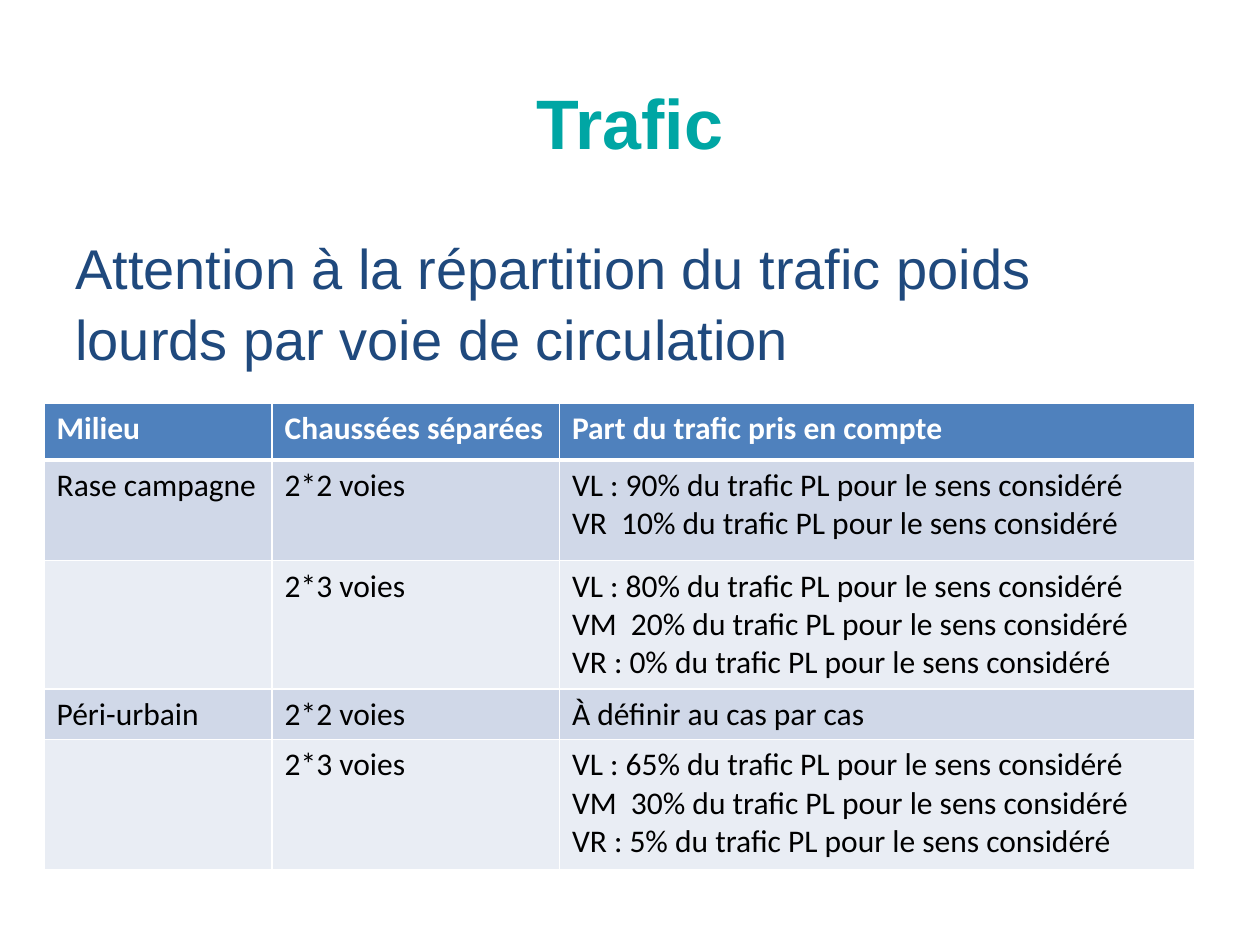
from lxml import etree
from pptx import Presentation
from pptx.dml.color import RGBColor
from pptx.enum.text import MSO_ANCHOR, PP_ALIGN
from pptx.oxml.ns import qn
from pptx.util import Inches, Pt

TEAL = RGBColor(0x00, 0xA6, 0xA4)
NAVY = RGBColor(0x1F, 0x49, 0x7D)
HEADER_BLUE = RGBColor(0x4F, 0x81, 0xBD)
BAND_DARK = RGBColor(0xD0, 0xD8, 0xE8)
BAND_LIGHT = RGBColor(0xE9, 0xED, 0xF4)
WHITE = RGBColor(0xFF, 0xFF, 0xFF)
BLACK = RGBColor(0x00, 0x00, 0x00)

COLUMN_WIDTHS = [1.81, 2.28, 5.04]
ROW_HEIGHTS = [0.45, 0.8, 1.02, 0.4, 1.03]
ROWS = [
    ["Milieu", "Chaussées séparées", "Part du trafic pris en compte"],
    ["Rase campagne", "2*2 voies",
     "VL : 90% du trafic PL pour le sens considéré\n"
     "VR  10% du trafic PL pour le sens considéré"],
    ["", "2*3 voies",
     "VL : 80% du trafic PL pour le sens considéré\n"
     "VM  20% du trafic PL pour le sens considéré\n"
     "VR : 0% du trafic PL pour le sens considéré"],
    ["Péri-urbain", "2*2 voies", "À définir au cas par cas"],
    ["", "2*3 voies",
     "VL : 65% du trafic PL pour le sens considéré\n"
     "VM  30% du trafic PL pour le sens considéré\n"
     "VR : 5% du trafic PL pour le sens considéré"],
]


def add_text(slide, text, top, height, margin_top, size, color):
    """Add a full-width text box and return its text frame."""
    box = slide.shapes.add_textbox(Inches(0.5), Inches(top), Inches(9), Inches(height))
    frame = box.text_frame
    frame.word_wrap = True
    frame.margin_top = Inches(margin_top)
    frame.text = text
    font = frame.paragraphs[0].font
    font.name = "Arial"
    font.size = Pt(size)
    font.color.rgb = color
    return frame


def set_borders(cell, widths):
    """Draw white cell borders; widths maps edge tags to points, in schema order."""
    properties = cell._tc.get_or_add_tcPr()
    for position, (edge, width) in enumerate(widths.items()):
        line = etree.Element(qn(f"a:{edge}"), w=str(Pt(width)))
        fill = etree.SubElement(line, qn("a:solidFill"))
        etree.SubElement(fill, qn("a:srgbClr"), val=str(WHITE))
        properties.insert(position, line)


presentation = Presentation()
presentation.slide_width = Inches(10)
presentation.slide_height = Inches(7.5)
slide = presentation.slides.add_slide(presentation.slide_layouts[6])

title = add_text(slide, "Trafic", 0.3, 1.25, 0.13, 40, TEAL)
title.vertical_anchor = MSO_ANCHOR.MIDDLE
title.paragraphs[0].alignment = PP_ALIGN.CENTER
title.paragraphs[0].font.bold = True

body = add_text(
    slide, "Attention à la répartition du trafic poids lourds par voie de circulation",
    1.75, 4.95, 0.07, 32, NAVY)
body.paragraphs[0].line_spacing = 1.06

table = slide.shapes.add_table(
    len(ROWS), len(COLUMN_WIDTHS), Inches(0.35), Inches(3.2),
    Inches(sum(COLUMN_WIDTHS)), Inches(sum(ROW_HEIGHTS))).table
for column, width in zip(table.columns, COLUMN_WIDTHS):
    column.width = Inches(width)
for row, height in zip(table.rows, ROW_HEIGHTS):
    row.height = Inches(height)

for row_index, texts in enumerate(ROWS):
    is_header = row_index == 0
    if is_header:
        fill_color = HEADER_BLUE
    else:
        fill_color = BAND_DARK if row_index % 2 else BAND_LIGHT
    borders = {"lnL": 1, "lnR": 1,
               "lnT": 3 if row_index == 1 else 1,
               "lnB": 3 if is_header else 1}
    for column_index, text in enumerate(texts):
        cell = table.cell(row_index, column_index)
        cell.text = text
        cell.fill.solid()
        cell.fill.fore_color.rgb = fill_color
        set_borders(cell, borders)
        for paragraph in cell.text_frame.paragraphs:
            paragraph.font.name = "Calibri"
            paragraph.font.size = Pt(18)
            paragraph.font.bold = is_header
            paragraph.font.color.rgb = WHITE if is_header else BLACK

presentation.save("out.pptx")
